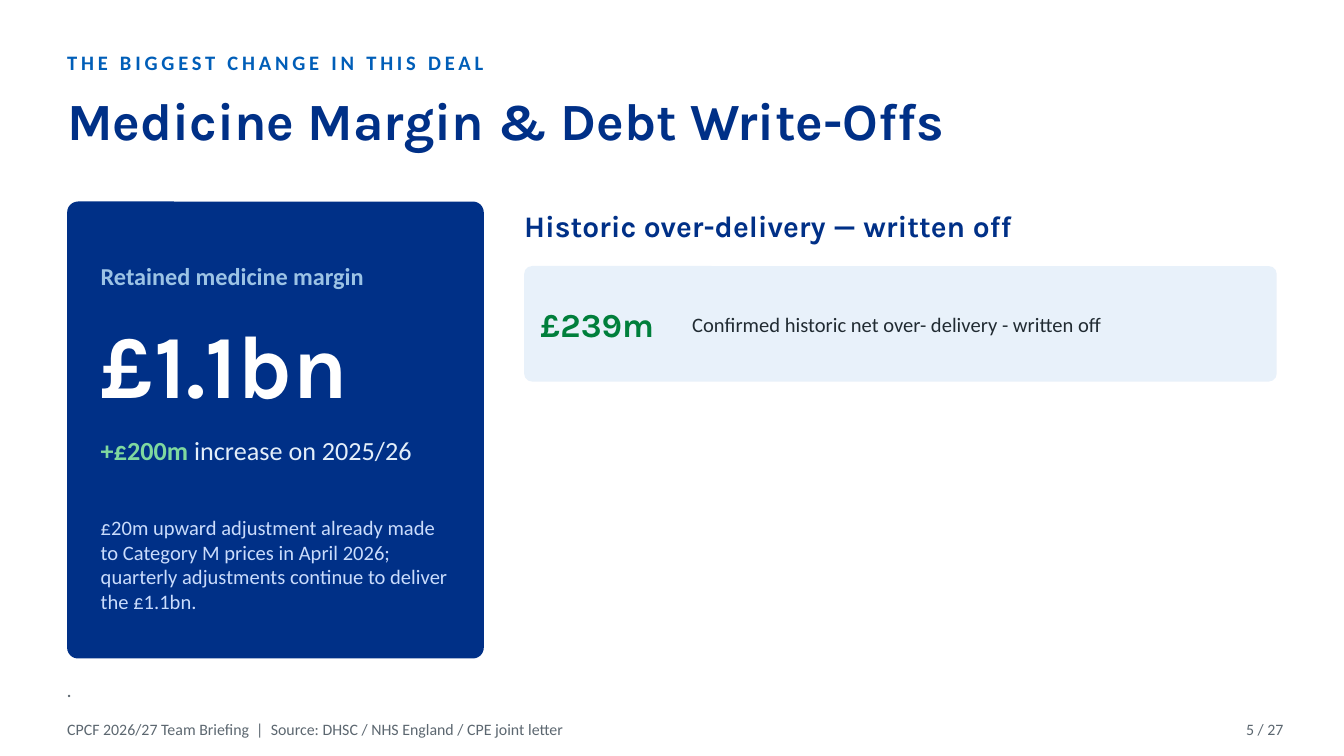
"""Build the medicine margin and debt write-offs briefing slide."""
from dataclasses import dataclass
from typing import Any

from pptx import Presentation
from pptx.dml.color import RGBColor
from pptx.enum.shapes import MSO_SHAPE as Preset
from pptx.enum.text import MSO_ANCHOR as Anchor, MSO_AUTO_SIZE as AutoSize, PP_ALIGN as Align
from pptx.util import Emu, Pt

EMU_PER_PX = 4572
WIDTH, HEIGHT = 2000, 1125
MARGIN, FULL_WIDTH = 100, 1800
CARD_LEFT, CARD_WIDTH = 150, 520
DEBT_LEFT, DEBT_WIDTH = 780, 1120
BODY_TOP = 300
AMOUNT_TOP, AMOUNT_HEIGHT = 412, 140
FOOTER_TOP, FOOTER_HEIGHT = 1060, 50

NAVY = RGBColor(0x00, 0x30, 0x87)
BLUE = RGBColor(0x00, 0x5E, 0xB8)
SKY = RGBColor(0x9C, 0xC3, 0xE5)
MINT = RGBColor(0x7F, 0xD9, 0x9F)
ICE = RGBColor(0xE3, 0xEE, 0xF9)
PERIWINKLE = RGBColor(0xCA, 0xDC, 0xFC)
PALE = RGBColor(0xE8, 0xF1, 0xFA)
GREEN = RGBColor(0x00, 0x7F, 0x3B)
INK = RGBColor(0x21, 0x2B, 0x32)
GREY = RGBColor(0x5C, 0x67, 0x70)
WHITE = RGBColor(0xFF, 0xFF, 0xFF)

HEADING, BODY = "Karla", "Calibri"
FRAME_FORMAT = {
    "word_wrap": True,
    "auto_size": AutoSize.NONE,
    "vertical_anchor": Anchor.MIDDLE,
    "margin_left": 0,
    "margin_top": 0,
    "margin_right": 0,
    "margin_bottom": 0,
}


@dataclass(frozen=True)
class Box:
    left: int
    top: int
    width: int
    height: int

    def emu(self) -> tuple[Emu, ...]:
        return tuple(Emu(px * EMU_PER_PX) for px in (self.left, self.top, self.width, self.height))


@dataclass(frozen=True)
class Phrase:
    text: str
    size: float
    color: RGBColor
    face: str = BODY
    bold: bool = False
    italic: bool = False
    spacing: int = 0


@dataclass(frozen=True)
class Label:
    box: Box
    phrases: tuple[Phrase, ...]
    align: Align = Align.LEFT


@dataclass(frozen=True)
class Panel:
    box: Box
    color: RGBColor
    rounding: float


TITLE = Label(
    Box(MARGIN, 116, FULL_WIDTH, 124),
    (Phrase("Medicine Margin & Debt Write-Offs", 28, NAVY, HEADING, True),),
)
PANELS = (
    Panel(Box(MARGIN, BODY_TOP, 620, 680), NAVY, 0.026),
    Panel(Box(DEBT_LEFT, 396, DEBT_WIDTH, 172), PALE, 0.07),
)
LABELS = (
    Label(Box(MARGIN, 64, FULL_WIDTH, 56),
          (Phrase("THE BIGGEST CHANGE IN THIS DEAL", 11, BLUE, bold=True, spacing=200),)),
    Label(Box(CARD_LEFT, 356, CARD_WIDTH, 110),
          (Phrase("Retained medicine margin", 13, SKY, bold=True),)),
    Label(Box(CARD_LEFT, 460, CARD_WIDTH, 160), (Phrase("£1.1bn", 48, WHITE, HEADING, True),)),
    Label(Box(CARD_LEFT, 630, CARD_WIDTH, 80),
          (Phrase("+£200m ", 14, MINT, bold=True), Phrase("increase on 2025/26", 14, ICE))),
    Label(Box(CARD_LEFT, 730, CARD_WIDTH, 220),
          (Phrase("£20m upward adjustment already made to Category M prices in April 2026; "
                  "quarterly adjustments continue to deliver the £1.1bn.", 11, PERIWINKLE),)),
    Label(Box(DEBT_LEFT, BODY_TOP, DEBT_WIDTH, 70),
          (Phrase("Historic over-delivery — written off", 16, NAVY, HEADING, True),)),
    Label(Box(804, AMOUNT_TOP, 224, AMOUNT_HEIGHT),
          (Phrase("£239m", 18, GREEN, HEADING, True),)),
    Label(Box(1030, AMOUNT_TOP, 840, AMOUNT_HEIGHT),
          (Phrase("Confirmed historic net over- delivery - written off", 11, INK),)),
    Label(Box(MARGIN, 996, FULL_WIDTH, 60), (Phrase(".", 10.5, GREY, italic=True),)),
    Label(Box(MARGIN, FOOTER_TOP, 1440, FOOTER_HEIGHT),
          (Phrase("CPCF 2026/27 Team Briefing  |  Source: DHSC / NHS England / CPE joint letter",
                  8.5, GREY),)),
    Label(Box(1800, FOOTER_TOP, 110, FOOTER_HEIGHT), (Phrase("5 / 27", 8.5, GREY),), Align.RIGHT),
)


def apply_format(target: Any, values: dict[str, Any]) -> None:
    for attribute, value in values.items():
        setattr(target, attribute, value)


def write_label(holder: Any, label: Label) -> None:
    frame = holder.text_frame
    apply_format(frame, FRAME_FORMAT)
    paragraph = frame.paragraphs[0]
    paragraph.alignment = label.align
    for phrase in label.phrases:
        run = paragraph.add_run()
        run.text = phrase.text
        apply_format(run.font, {
            "name": phrase.face,
            "size": Pt(phrase.size),
            "bold": phrase.bold,
            "italic": phrase.italic,
        })
        run.font.color.rgb = phrase.color
        if phrase.spacing:
            run.font._element.set("spc", str(phrase.spacing))


def draw_panel(slide: Any, panel: Panel) -> None:
    card = slide.shapes.add_shape(Preset.ROUNDED_RECTANGLE, *panel.box.emu())
    card.adjustments[0] = panel.rounding
    card.fill.solid()
    card.fill.fore_color.rgb = panel.color
    card.line.fill.background()
    card.shadow.inherit = False


def place_title(slide: Any, label: Label) -> None:
    title = slide.shapes.title
    apply_format(title, dict(zip(("left", "top", "width", "height"), label.box.emu())))
    write_label(title, label)


def main() -> None:
    deck = Presentation()
    deck.slide_width, deck.slide_height = Emu(WIDTH * EMU_PER_PX), Emu(HEIGHT * EMU_PER_PX)
    slide = deck.slides.add_slide(deck.slide_layouts.get_by_name("Title Only"))
    place_title(slide, TITLE)
    for panel in PANELS:
        draw_panel(slide, panel)
    for label in LABELS:
        write_label(slide.shapes.add_textbox(*label.box.emu()), label)
    deck.save("out.pptx")


if __name__ == "__main__":
    main()
